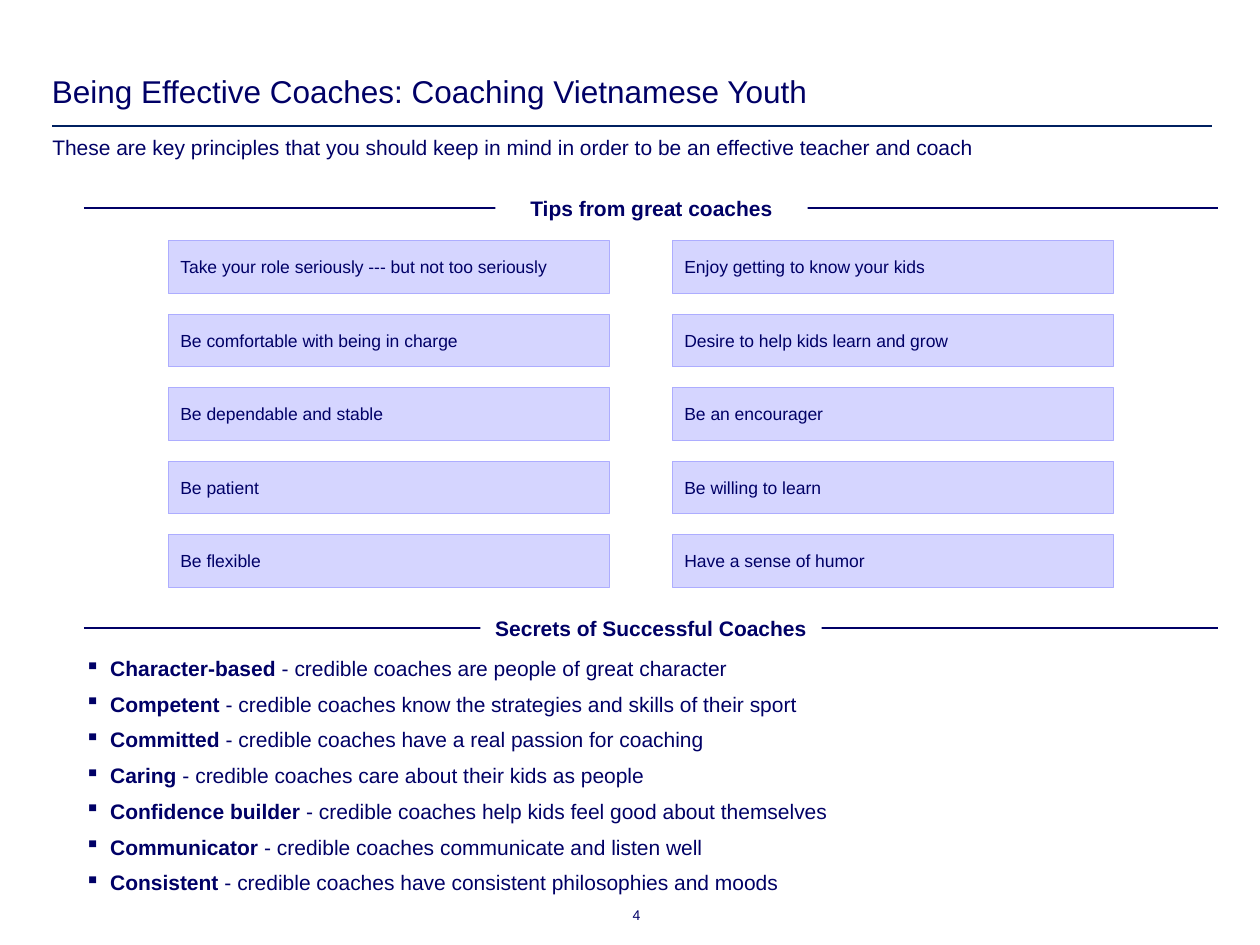
from dataclasses import dataclass

import lxml.etree
import pptx
import pptx.dml.color
import pptx.enum.shapes
import pptx.enum.text
import pptx.oxml.ns
import pptx.presentation
import pptx.shapes.autoshape
import pptx.slide
import pptx.util

Pt = pptx.util.Pt
RGBColor = pptx.dml.color.RGBColor
Align = pptx.enum.text.PP_ALIGN
Anchor = pptx.enum.text.MSO_ANCHOR
ShapeKind = pptx.enum.shapes.MSO_SHAPE
qualified = pptx.oxml.ns.qn

NAVY = RGBColor(0x00, 0x00, 0x66)
RULE_BLUE = RGBColor(0x00, 0x20, 0x60)
LAVENDER = RGBColor(0xD5, 0xD5, 0xFF)
LAVENDER_EDGE = RGBColor(0xAD, 0xAD, 0xFF)
WHITE = RGBColor(0xFF, 0xFF, 0xFF)

FONT = "Arial"
HANGING = 14.4
TIP_LEFT, TIP_TOP = 96, 137.5
TIP_WIDTH, TIP_HEIGHT = 252, 30
COLUMN_STEP, ROW_STEP = 288, 42


@dataclass(frozen=True)
class Area:
    left: float
    top: float
    width: float
    height: float

    def lengths(self) -> list[int]:
        return [Pt(v) for v in (self.left, self.top, self.width, self.height)]


@dataclass(frozen=True)
class Heading:
    text: str
    line_y: float
    left: float
    width: float


@dataclass(frozen=True)
class Secret:
    name: str
    meaning: str


HEADINGS = [
    Heading("Tips from great coaches", 118.8, 283, 178.5),
    Heading("Secrets of Successful Coaches", 358.8, 274.5, 195),
]

TIP_COLUMNS = [
    [
        "Take your role seriously --- but not too seriously",
        "Be comfortable with being in charge",
        "Be dependable and stable",
        "Be patient",
        "Be flexible",
    ],
    [
        "Enjoy getting to know your kids",
        "Desire to help kids learn and grow",
        "Be an encourager",
        "Be willing to learn",
        "Have a sense of humor",
    ],
]

SECRETS = [
    Secret("Character-based", " - credible coaches are people of great character"),
    Secret("Competent", " - credible coaches know the strategies and skills of their sport"),
    Secret("Committed", " - credible coaches have a real passion for coaching"),
    Secret("Caring", " - credible coaches care about their kids as people"),
    Secret("Confidence builder ", "- credible coaches help kids feel good about themselves"),
    Secret("Communicator", " - credible coaches communicate and listen well"),
    Secret("Consistent", " - credible coaches have consistent philosophies and moods"),
]


def write_text(
    box: pptx.shapes.autoshape.Shape,
    text: str | list[Secret],
    *,
    size: float = 12,
    bold: bool = False,
    align: Align = Align.LEFT,
    anchor: Anchor = Anchor.TOP,
    insets: tuple[float, float, float, float] = (7.2, 3.6, 7.2, 3.6),
    line_spacing: float = 1.0,
    space_before: float = 0,
    hanging: float = 0,
    bullet: str = "",
) -> None:
    frame = box.text_frame
    frame.word_wrap = True
    frame.vertical_anchor = anchor
    frame.margin_left, frame.margin_top, frame.margin_right, frame.margin_bottom = map(Pt, insets)
    if isinstance(text, str):
        lines = [[(text, bold)]]
    else:
        lines = [[(item.name, True), (item.meaning, False)] for item in text]
    for index, line in enumerate(lines):
        para = frame.add_paragraph() if index else frame.paragraphs[0]
        para.alignment = align
        para.line_spacing = line_spacing
        para.space_before = Pt(space_before)
        properties = para._p.get_or_add_pPr()
        if hanging:
            properties.set("marL", str(Pt(hanging)))
            properties.set("indent", str(-Pt(hanging)))
        if bullet:
            lxml.etree.SubElement(properties, qualified("a:buChar")).set("char", bullet)
        for words, heavy in line:
            span = para.add_run()
            span.text = words
            span.font.name = FONT
            span.font.size = Pt(size)
            span.font.bold = heavy
            span.font.color.rgb = NAVY


def add_text(page: pptx.slide.Slide, area: Area, text: str | list[Secret], **text_format) -> None:
    write_text(page.shapes.add_textbox(*area.lengths()), text, **text_format)


def add_rule(
    page: pptx.slide.Slide, left: float, right: float, y: float, color: RGBColor, weight: float
) -> None:
    rule = page.shapes.add_connector(
        pptx.enum.shapes.MSO_CONNECTOR.STRAIGHT, Pt(left), Pt(y), Pt(right), Pt(y)
    )
    rule.line.color.rgb = color
    rule.line.width = Pt(weight)
    lxml.etree.SubElement(rule._element.spPr, qualified("a:effectLst"))


def add_heading(page: pptx.slide.Slide, heading: Heading) -> None:
    add_rule(page, 48, 696, heading.line_y, NAVY, 1)
    area = Area(heading.left, heading.line_y - 10.8, heading.width, 21.6)
    box = page.shapes.add_shape(ShapeKind.RECTANGLE, *area.lengths())
    box.shadow.inherit = False
    box.fill.solid()
    box.fill.fore_color.rgb = WHITE
    box.line.fill.background()
    write_text(box, heading.text, bold=True, align=Align.CENTER)


def add_tip(page: pptx.slide.Slide, text: str, column: int, row: int) -> None:
    area = Area(
        TIP_LEFT + column * COLUMN_STEP, TIP_TOP + row * ROW_STEP, TIP_WIDTH, TIP_HEIGHT
    )
    box = page.shapes.add_shape(ShapeKind.FLOWCHART_PROCESS, *area.lengths())
    box.shadow.inherit = False
    box.fill.solid()
    box.fill.fore_color.rgb = LAVENDER
    box.line.color.rgb = LAVENDER_EDGE
    box.line.width = Pt(0.25)
    write_text(box, text, size=10, anchor=Anchor.MIDDLE, insets=(7.2, 3.6, 3.6, 3.6),
               space_before=6, hanging=HANGING)


def main() -> None:
    deck = pptx.Presentation()
    deck.slide_width, deck.slide_height = Pt(720), Pt(540)
    page = deck.slides.add_slide(deck.slide_layouts[6])

    add_text(page, Area(294, 519, 72, 9.5), "4", size=8, align=Align.RIGHT,
             insets=(0, 0, 0, 0), line_spacing=0.95)
    add_rule(page, 30, 692.5, 72, RULE_BLUE, 1.5)
    add_text(page, Area(26, 39, 694, 28), "Being Effective Coaches: Coaching Vietnamese Youth",
             size=18, anchor=Anchor.BOTTOM, insets=(3.6, 3.6, 3.6, 3.6), line_spacing=0.95)
    add_text(page, Area(22.8, 73.5, 660, 21.6),
             "These are key principles that you should keep in mind "
             "in order to be an effective teacher and coach")
    for heading in HEADINGS:
        add_heading(page, heading)
    add_text(page, Area(41.5, 371, 468, 145.5), SECRETS,
             space_before=6, hanging=HANGING, bullet="▪")
    for column, tips in enumerate(TIP_COLUMNS):
        for row, tip in enumerate(tips):
            add_tip(page, tip, column, row)

    deck.save("out.pptx")


if __name__ == "__main__":
    main()
